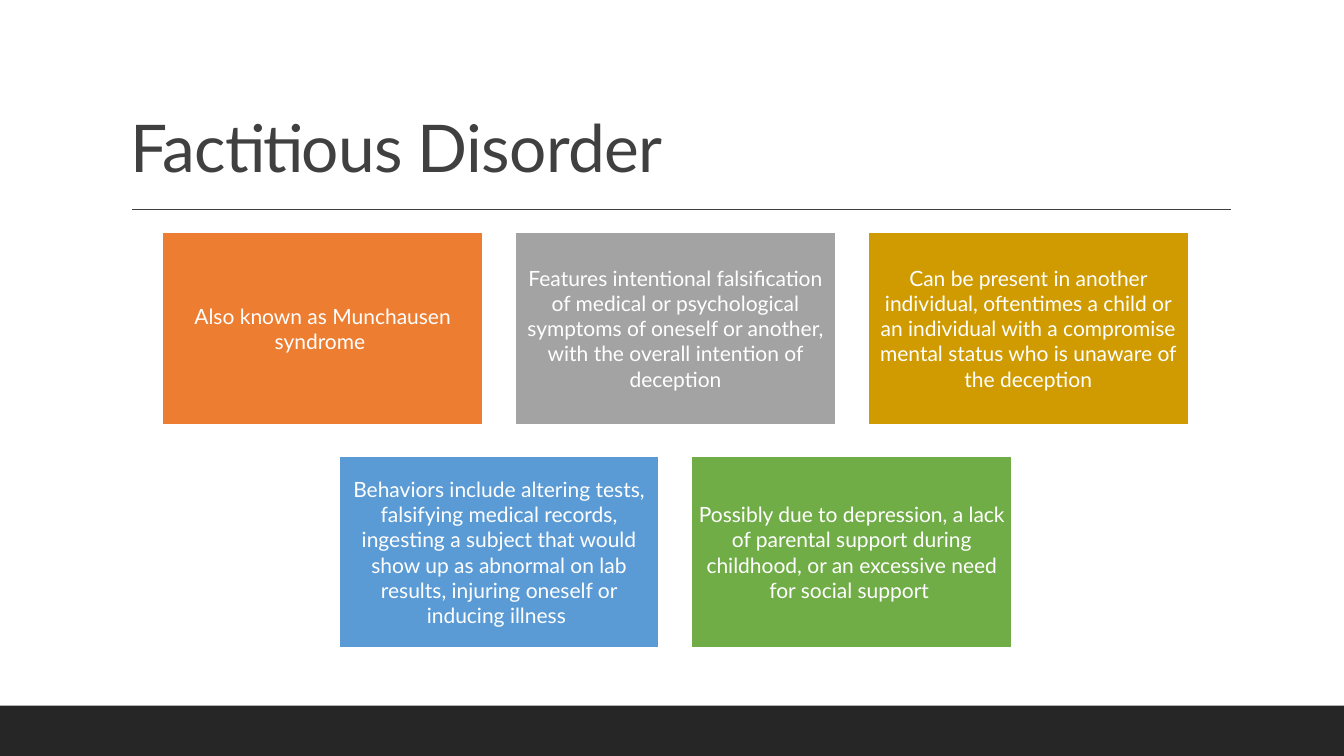
"""Build the Factitious Disorder slide with five coloured cards."""
from dataclasses import dataclass

from lxml import etree
from pptx import Presentation
from pptx.dml.color import RGBColor
from pptx.enum.shapes import MSO_CONNECTOR, MSO_SHAPE
from pptx.enum.text import MSO_ANCHOR, PP_ALIGN
from pptx.oxml.ns import qn
from pptx.util import Pt

RECTANGLE = MSO_SHAPE.RECTANGLE
STRAIGHT = MSO_CONNECTOR.STRAIGHT
MIDDLE, BOTTOM = MSO_ANCHOR.MIDDLE, MSO_ANCHOR.BOTTOM
CENTER = PP_ALIGN.CENTER

SLIDE_WIDTH, SLIDE_HEIGHT = 960, 540
CARD_WIDTH, CARD_HEIGHT = 229, 137.5
COLUMN_PITCH, ROW_PITCH = 252, 159.9
GRID_CENTER, GRID_TOP = 482.5, 165.7
CARD_INSET = 4.3
FOOTER_HEIGHT = 36


@dataclass(frozen=True)
class Theme:
    """Colours, font and type sizes of the slide."""
    font: str = "Lato"
    title_size: float = 47
    card_size: float = 15
    white: str = "FFFFFF"
    title: str = "404040"
    footer: str = "262626"
    orange: str = "ED7D31"
    gray: str = "A3A3A3"
    gold: str = "CF9B00"
    blue: str = "5B9BD5"
    green: str = "70AD47"


THEME = Theme()

CARD_ROWS = [
    [
        ("Also known as Munchausen syndrome ", THEME.orange),
        ("Features intentional falsification of medical or psychological "
         "symptoms of oneself or another, with the overall intention of "
         "deception", THEME.gray),
        ("Can be present in another individual, oftentimes a child or an "
         "individual with a compromise mental status who is unaware of the "
         "deception", THEME.gold),
    ],
    [
        ("Behaviors include altering tests, falsifying medical records, "
         "ingesting a subject that would show up as abnormal on lab results, "
         "injuring oneself or inducing illness ", THEME.blue),
        ("Possibly due to depression, a lack of parental support during "
         "childhood, or an excessive need for social support ", THEME.green),
    ],
]


def style_font(paragraph, size, color):
    """Apply the theme font with a size and colour to a paragraph."""
    paragraph.font.name = THEME.font
    paragraph.font.size = Pt(size)
    paragraph.font.color.rgb = RGBColor.from_string(color)


def add_block(slide, left, top, width, height, color):
    """Add a filled rectangle without outline or shadow."""
    block = slide.shapes.add_shape(
        RECTANGLE, Pt(left), Pt(top), Pt(width), Pt(height))
    block.shadow.inherit = False
    block.fill.solid()
    block.fill.fore_color.rgb = RGBColor.from_string(color)
    block.line.fill.background()
    return block


def add_title(slide, text):
    """Add the slide title, resting on the bottom of its box."""
    title = slide.shapes.add_textbox(Pt(86.4), Pt(22.5), Pt(792), Pt(114.3))
    frame = title.text_frame
    frame.word_wrap = True
    frame.vertical_anchor = BOTTOM
    paragraph = frame.paragraphs[0]
    paragraph.line_spacing = 0.9
    style_font(paragraph, THEME.title_size, THEME.title)
    run = paragraph.add_run()
    run.text = text
    run._r.get_or_add_rPr().set("spc", "-50")


def add_rule(slide, left, right, top):
    """Add the thin horizontal line under the title."""
    rule = slide.shapes.add_connector(
        STRAIGHT, Pt(left), Pt(top), Pt(right), Pt(top))
    rule.line.color.rgb = RGBColor.from_string(THEME.title)
    rule.line.width = Pt(1)
    etree.SubElement(rule._element.spPr, qn("a:effectLst"))


def add_card(slide, left, top, text, color):
    """Add a coloured card with centred white text."""
    card = add_block(slide, left, top, CARD_WIDTH, CARD_HEIGHT, color)
    card.line.color.rgb = RGBColor.from_string(THEME.white)
    card.line.width = Pt(1.25)
    frame = card.text_frame
    frame.word_wrap = True
    frame.vertical_anchor = MIDDLE
    frame.margin_left = frame.margin_right = Pt(CARD_INSET)
    frame.margin_top = frame.margin_bottom = Pt(CARD_INSET)
    paragraph = frame.paragraphs[0]
    paragraph.text = text
    paragraph.alignment = CENTER
    style_font(paragraph, THEME.card_size, THEME.white)


def add_card_rows(slide, rows):
    """Lay out each row of cards centred on the grid."""
    for row_index, row in enumerate(rows):
        row_width = COLUMN_PITCH * (len(row) - 1) + CARD_WIDTH
        row_left = GRID_CENTER - row_width / 2
        top = GRID_TOP + row_index * ROW_PITCH
        for column, (text, color) in enumerate(row):
            add_card(slide, row_left + column * COLUMN_PITCH, top, text, color)


def main():
    """Create the presentation and save it."""
    presentation = Presentation()
    presentation.slide_width = Pt(SLIDE_WIDTH)
    presentation.slide_height = Pt(SLIDE_HEIGHT)
    slide = presentation.slides.add_slide(presentation.slide_layouts[6])
    slide.background.fill.solid()
    slide.background.fill.fore_color.rgb = RGBColor.from_string(THEME.white)
    add_title(slide, "Factitious Disorder")
    add_rule(slide, 94.3, 879, 149.5)
    add_block(slide, 0, SLIDE_HEIGHT - FOOTER_HEIGHT,
              SLIDE_WIDTH, FOOTER_HEIGHT, THEME.footer)
    add_card_rows(slide, CARD_ROWS)
    presentation.save("out.pptx")


if __name__ == "__main__":
    main()
